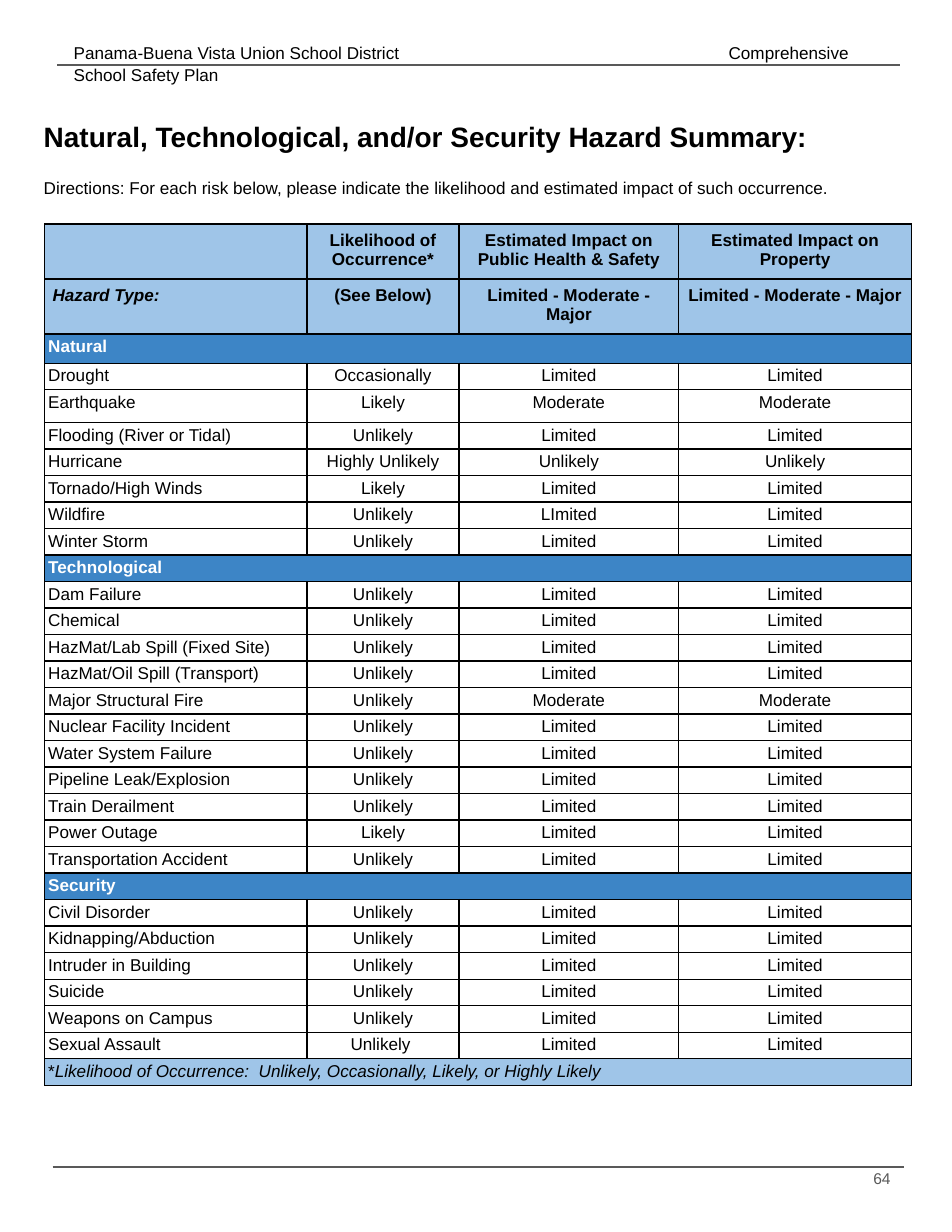
import pptx
import pptx.util
import pptx.dml.color
import pptx.enum.shapes
import pptx.enum.text
import pptx.oxml
import pptx.oxml.ns
import lxml.etree
from dataclasses import dataclass

Pt = pptx.util.Pt
Align = pptx.enum.text.PP_ALIGN


@dataclass(frozen=True)
class Theme:
    font: str = "Arial"
    ink: str = "000000"
    paper: str = "FFFFFF"
    muted: str = "595959"
    heading_fill: str = "9FC5E8"
    section_fill: str = "3D85C6"
    title_size: float = 18
    body_size: float = 11
    small_size: float = 10


theme = Theme()


def style(paragraph, size, color=theme.ink, bold=False, italic=False, align=Align.LEFT):
    paragraph.alignment = align
    font = paragraph.font
    font.name, font.size, font.bold, font.italic = theme.font, Pt(size), bold, italic
    font.color.rgb = pptx.dml.color.RGBColor.from_string(color)


def frame_text(frame, inset_x, inset_y):
    frame.word_wrap = True
    frame.vertical_anchor = pptx.enum.text.MSO_ANCHOR.TOP
    frame.margin_left = frame.margin_right = Pt(inset_x)
    frame.margin_top = frame.margin_bottom = Pt(inset_y)


deck = pptx.Presentation()
deck.slide_width, deck.slide_height = Pt(612), Pt(792)
slide = deck.slides.add_slide(deck.slide_layouts[5])
shapes = slide.shapes

running_head = shapes.add_textbox(Pt(40.32), Pt(19.44), Pt(542.88), Pt(28.08)).text_frame
frame_text(running_head, 7.2, 7.2)
head_line = running_head.paragraphs[0]
head_line.text = "Panama-Buena Vista Union School District\tComprehensive School Safety Plan"
head_line.line_spacing = 1.07
tabs = lxml.etree.SubElement(head_line._p.get_or_add_pPr(), pptx.oxml.ns.qn("a:tabLst"))
lxml.etree.SubElement(tabs, pptx.oxml.ns.qn("a:tab"), pos=str(Pt(421)), algn="l")
style(head_line, theme.body_size)

for left, right, y in [(36.72, 578.88, 41.76), (33.84, 581.04, 750.24)]:
    rule = shapes.add_connector(
        pptx.enum.shapes.MSO_CONNECTOR.STRAIGHT, Pt(left), Pt(y), Pt(right), Pt(y))
    rule.line.color.rgb = pptx.dml.color.RGBColor.from_string(theme.muted)
    rule.line.width = Pt(0.75)
    lxml.etree.SubElement(rule._element.spPr, pptx.oxml.ns.qn("a:effectLst"))

title = shapes.title
title.left, title.top, title.width, title.height = Pt(20.88), Pt(68.4), Pt(570.24), Pt(60.48)
frame_text(title.text_frame, 7.2, 7.2)
title.text_frame.auto_size = pptx.enum.text.MSO_AUTO_SIZE.NONE
title.text_frame.text = (
    "Natural, Technological, and/or Security Hazard Summary:\n\n"
    "Directions: For each risk below, please indicate the likelihood and estimated impact of such occurrence.")
for paragraph, size in zip(
        title.text_frame.paragraphs, [theme.title_size, theme.body_size, theme.body_size]):
    paragraph.line_spacing = 1.07
    style(paragraph, size, bold=size == theme.title_size)

headings = [
    ("", "Likelihood of Occurrence*", "Estimated Impact on Public Health & Safety",
     "Estimated Impact on Property"),
    ("Hazard Type:", "(See Below)", "Limited - Moderate - Major", "Limited - Moderate - Major"),
]
sections = {
    "Natural": [
        ("Drought", "Occasionally", "Limited", "Limited"),
        ("Earthquake", "Likely", "Moderate", "Moderate"),
        ("Flooding (River or Tidal)", "Unlikely", "Limited", "Limited"),
        ("Hurricane", "Highly Unlikely", "Unlikely", "Unlikely"),
        ("Tornado/High Winds", "Likely", "Limited", "Limited"),
        ("Wildfire", "Unlikely", "LImited", "Limited"),
        ("Winter Storm", "Unlikely", "Limited", "Limited"),
    ],
    "Technological": [
        ("Dam Failure", "Unlikely", "Limited", "Limited"),
        ("Chemical", "Unlikely", "Limited", "Limited"),
        ("HazMat/Lab Spill (Fixed Site)", "Unlikely", "Limited", "Limited"),
        ("HazMat/Oil Spill (Transport)", "Unlikely", "Limited", "Limited"),
        ("Major Structural Fire", "Unlikely", "Moderate", "Moderate"),
        ("Nuclear Facility Incident", "Unlikely", "Limited", "Limited"),
        ("Water System Failure", "Unlikely", "Limited", "Limited"),
        ("Pipeline Leak/Explosion", "Unlikely", "Limited", "Limited"),
        ("Train Derailment", "Unlikely", "Limited", "Limited"),
        ("Power Outage", "Likely", "Limited", "Limited"),
        ("Transportation Accident", "Unlikely", "Limited", "Limited"),
    ],
    "Security": [
        ("Civil Disorder", "Unlikely", "Limited", "Limited"),
        ("Kidnapping/Abduction", "Unlikely", "Limited", "Limited"),
        ("Intruder in Building", "Unlikely", "Limited", "Limited"),
        ("Suicide", "Unlikely", "Limited", "Limited"),
        ("Weapons on Campus", "Unlikely", "Limited", "Limited"),
        ("Sexual Assault", "Unlikely ", "Limited", "Limited"),
    ],
}
footnote = "Likelihood of Occurrence:  Unlikely, Occasionally, Likely, or Highly Likely"

rows = [("heading", row) for row in headings]
for section, hazards in sections.items():
    rows.append(("section", (section, "", "", "")))
    rows += [("hazard", hazard) for hazard in hazards]
rows.append(("footnote", ("", "", "", "")))

column_widths = [168.48, 97.92, 141.12, 149.76]
special_heights = {"Natural": 18.7, "Earthquake": 21.2}
heights = [34.4 if kind == "heading" else special_heights.get(row[0], 16.62) for kind, row in rows]
fills = {"heading": theme.heading_fill, "section": theme.section_fill,
         "footnote": theme.heading_fill}

hazard_table = shapes.add_table(
    len(rows), len(column_widths), Pt(28.8), Pt(144),
    Pt(sum(column_widths)), Pt(sum(heights))).table
hazard_table.first_row = hazard_table.horz_banding = False
for column, width in zip(hazard_table.columns, column_widths):
    column.width = Pt(width)

for r, (kind, values) in enumerate(rows):
    hazard_table.rows[r].height = Pt(heights[r])
    for c, value in enumerate(values):
        cell = hazard_table.cell(r, c)
        inset_x, inset_y = (5, 4.5) if kind == "heading" else (2.16, 1.9)
        cell.margin_left = cell.margin_right = Pt(inset_x)
        cell.margin_top = cell.margin_bottom = Pt(inset_y)
        paragraph = cell.text_frame.paragraphs[0]
        paragraph.text = value
        style(paragraph, theme.body_size,
              color=theme.paper if kind == "section" else theme.ink,
              bold=kind in ("heading", "section"),
              italic=value == "Hazard Type:",
              align=Align.CENTER if c else Align.LEFT)
        for side in ("a:lnL", "a:lnR", "a:lnT", "a:lnB"):
            border = lxml.etree.SubElement(
                cell._tc.get_or_add_tcPr(), pptx.oxml.ns.qn(side), w=str(Pt(1)))
            ink = lxml.etree.SubElement(border, pptx.oxml.ns.qn("a:solidFill"))
            lxml.etree.SubElement(ink, pptx.oxml.ns.qn("a:srgbClr"), val=theme.ink)
        if kind in fills:
            cell.fill.solid()
            cell.fill.fore_color.rgb = pptx.dml.color.RGBColor.from_string(fills[kind])
        else:
            cell.fill.background()
    if kind in ("section", "footnote"):
        hazard_table.cell(r, 0).merge(hazard_table.cell(r, len(column_widths) - 1))

note_line = hazard_table.cell(len(rows) - 1, 0).text_frame.paragraphs[0]
note_line.add_run().text = "*"
note = note_line.add_run()
note.text = footnote
note.font.italic = True

page_number = shapes.add_textbox(Pt(542.88), Pt(745.2), Pt(36.72), Pt(33.12)).text_frame
frame_text(page_number, 7.2, 7.2)
page_number.text = "64"
style(page_number.paragraphs[0], theme.small_size, color=theme.muted, align=Align.RIGHT)

deck.save("out.pptx")
